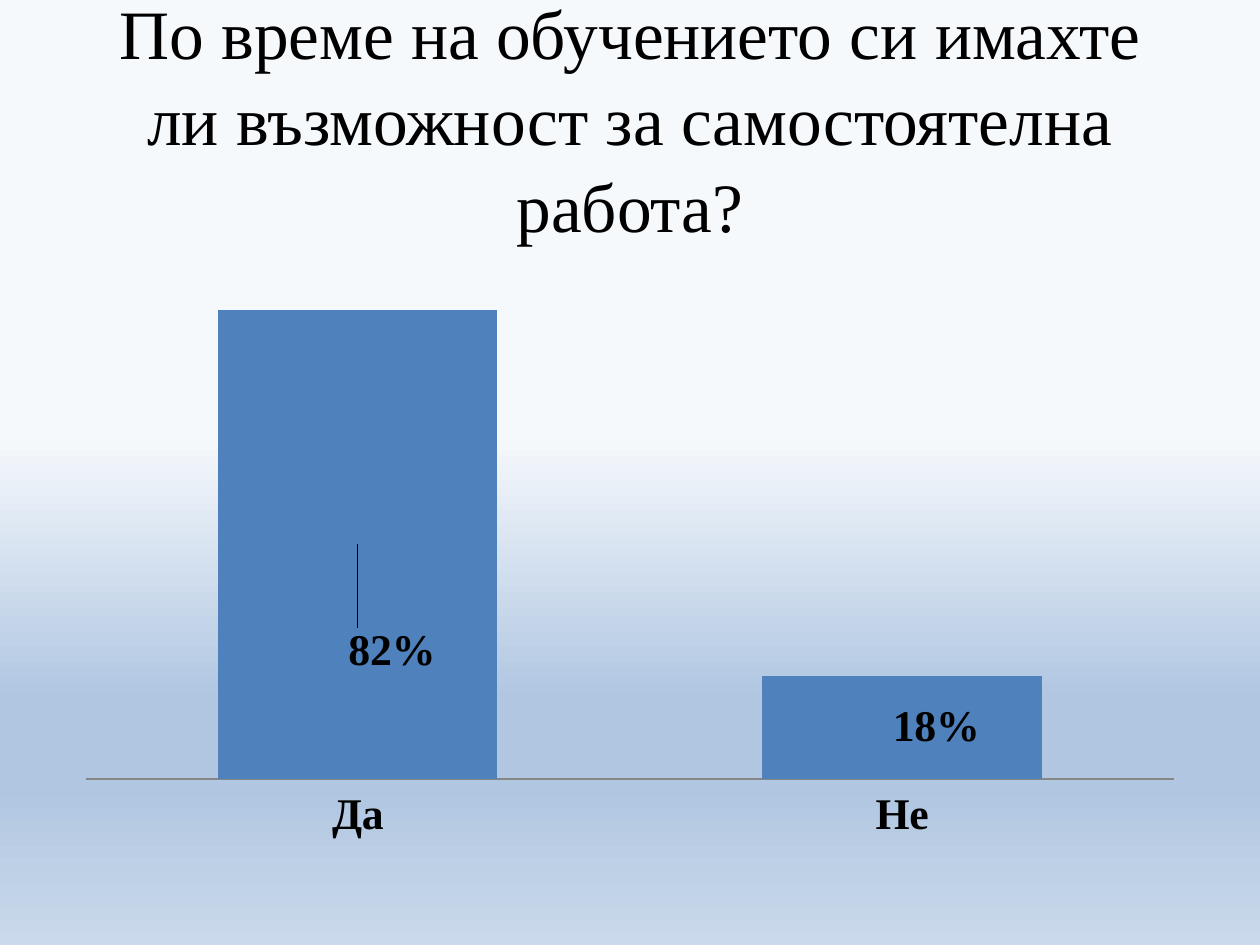
from lxml import etree
from pptx import Presentation
from pptx.chart.data import CategoryChartData
from pptx.dml.color import RGBColor
from pptx.enum.chart import XL_CHART_TYPE, XL_LABEL_POSITION, XL_TICK_LABEL_POSITION, XL_TICK_MARK
from pptx.enum.text import MSO_ANCHOR, MSO_AUTO_SIZE, PP_ALIGN
from pptx.oxml import parse_xml
from pptx.oxml.ns import nsdecls, qn
from pptx.util import Inches, Pt

STACKED = XL_CHART_TYPE.COLUMN_STACKED
CENTER = XL_LABEL_POSITION.CENTER
NO_TICK = XL_TICK_MARK.NONE
LOW = XL_TICK_LABEL_POSITION.LOW

# Content
TITLE = "По време на обучението си имахте ли възможност за самостоятелна работа?"
ANSWERS = [("Да", 0.82), ("Не", 0.18)]
SHIFTS = [(0.03, 0.18), (0.03, 0)]  # label offsets, as parts of the chart
STOPS = [(46, "F6F9FC"), (74, "B0C6E1"), (83, "B0C6E1"), (100, "CAD9EB")]
FONT = "Times New Roman"
BLACK, BLUE, GREY = "000000", "4F81BD", "868686"


def color(code):
    return RGBColor.from_string(code)


def style(font, size, bold):
    font.name, font.size, font.bold = FONT, Pt(size), bold
    font.color.rgb = color(BLACK)


def layout(**parts):
    box = etree.Element(qn("c:layout"))
    inner = etree.SubElement(box, qn("c:manualLayout"))
    for key, val in parts.items():
        etree.SubElement(inner, qn("c:" + key)).set("val", str(val))
    return box


prs = Presentation()
prs.slide_width, prs.slide_height = Inches(10), Inches(7.5)
slide = prs.slides.add_slide(prs.slide_layouts[5])

# Background gradient, top to bottom
slide.background.fill.solid()
back = slide.background.fill.fore_color
back.rgb = color(STOPS[0][1])
bg_pr = slide.element.find(".//" + qn("p:bgPr"))
stops = "".join(
    f'<a:gs pos="{pos * 1000}"><a:srgbClr val="{code}"/></a:gs>' for pos, code in STOPS)
grad = parse_xml(
    f'<a:gradFill {nsdecls("a")} rotWithShape="1"><a:gsLst>{stops}</a:gsLst>'
    '<a:lin ang="5400000" scaled="0"/></a:gradFill>')
bg_pr.replace(bg_pr.find(qn("a:solidFill")), grad)

# Title
title = slide.shapes.title
title.left, title.top = Inches(0.5), Inches(0.3)
title.width, title.height = Inches(9), Inches(1.25)
frame = title.text_frame
frame.text = TITLE
frame.word_wrap = True
frame.auto_size = MSO_AUTO_SIZE.NONE
frame.vertical_anchor = MSO_ANCHOR.MIDDLE
line = frame.paragraphs[0]
line.alignment = PP_ALIGN.CENTER
line.line_spacing = 1.04
style(line.runs[0].font, 39.6, False)

# Chart
data = CategoryChartData(number_format="0%")
data.categories = [name for name, _ in ANSWERS]
data.add_series("Series 1", [val for _, val in ANSWERS])
chart = slide.shapes.add_chart(
    STACKED, Inches(0.5), Inches(2), Inches(9), Inches(4.7), data).chart
chart.has_title = False
chart.has_legend = False
chart.font.name, chart.font.size = "Calibri", Pt(18)
chart.font.color.rgb = color(BLACK)

area = chart.element.find(".//" + qn("c:plotArea"))
for old in area.findall(qn("c:layout")):
    area.remove(old)
area.insert(0, layout(layoutTarget="inner", xMode="edge", yMode="edge",
                      x=0.02, y=0.02, w=0.96, h=0.87))

# Axes
cats, vals = chart.category_axis, chart.value_axis
cats.major_tick_mark = cats.minor_tick_mark = NO_TICK
cats.tick_label_position = LOW
cats.format.line.color.rgb = color(GREY)
style(cats.tick_labels.font, 25, True)
vals.visible = vals.has_major_gridlines = False
vals.minimum_scale, vals.maximum_scale = 0, 0.9

# Columns and their labels
plot = chart.plots[0]
plot.gap_width, plot.overlap = 95, 100
plot.vary_by_categories = False
bars = plot.series[0]
bars.format.fill.solid()
bars.format.fill.fore_color.rgb = color(BLUE)
labels = bars.data_labels
labels.show_value = True
labels.number_format, labels.number_format_is_linked = "0%", False
style(labels.font, 25, True)
for i in range(len(SHIFTS)):
    label = bars.points[i].data_label
    style(label.font, 25, True)
    label.position = CENTER
for (x, y), node in zip(SHIFTS, chart.element.iter(qn("c:dLbl"))):
    fmt = etree.Element(qn("c:numFmt"), formatCode="0%", sourceLinked="0")
    node.insert(1, layout(x=x, y=y))
    node.insert(2, fmt)

prs.save("out.pptx")
